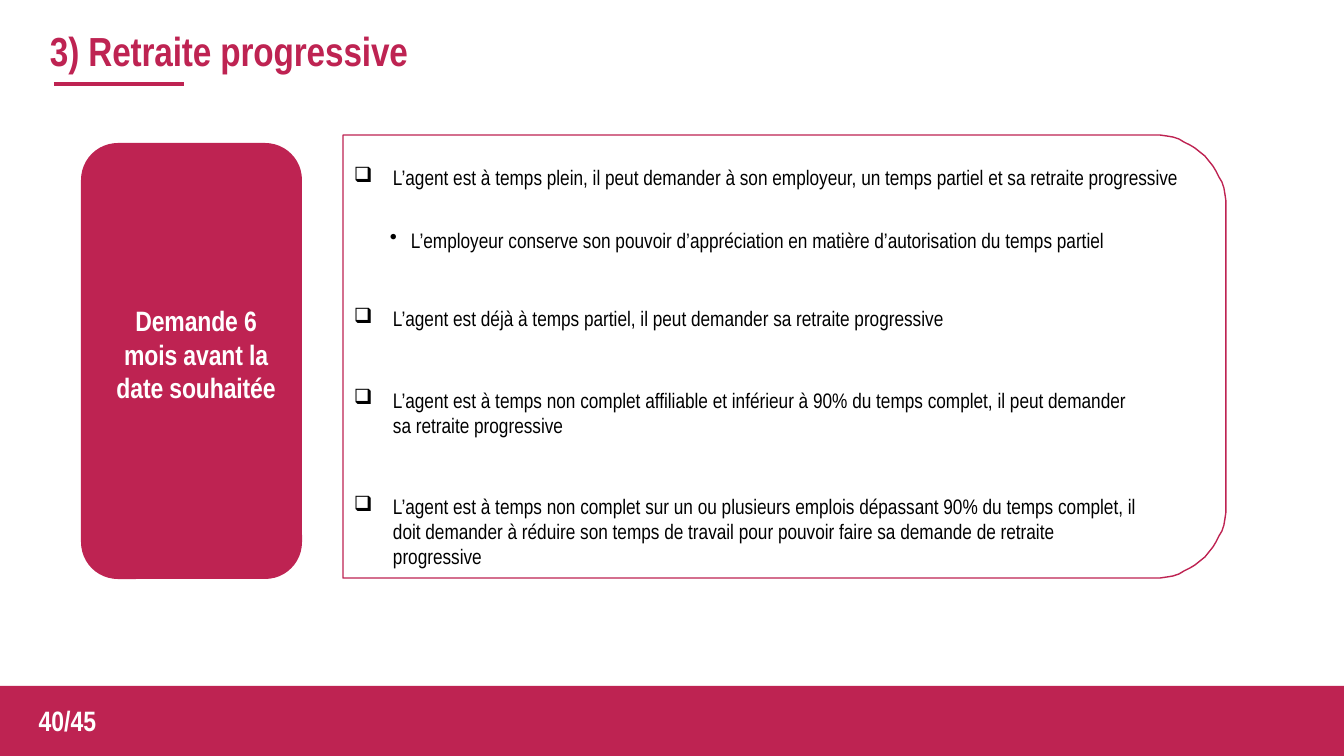
import math

import pptx
import pptx.chart.data
import pptx.dml.color
import pptx.enum.shapes
import pptx.enum.text
import pptx.oxml
import pptx.oxml.ns
import pptx.util
from lxml import etree

RED = pptx.dml.color.RGBColor(0xBE, 0x23, 0x52)
WHITE = pptx.dml.color.RGBColor(0xFF, 0xFF, 0xFF)
BLACK = pptx.dml.color.RGBColor(0x00, 0x00, 0x00)
FONT = "Arial Narrow"
WIDE, HIGH = 1344, 756
SCALE = 12192000 / WIDE
SHAPE = pptx.enum.shapes.MSO_SHAPE
ALIGN = pptx.enum.text.PP_ALIGN
ANCHOR = pptx.enum.text.MSO_ANCHOR


def emu(*px):
    return [pptx.util.Emu(round(n * SCALE)) for n in px]


def write(frame, lines, size=15, color=BLACK, bold=False, align=ALIGN.LEFT,
          gap=0, line=None, track=0, mark=None, indent=0, hang=0):
    for i, words in enumerate(lines):
        para = frame.paragraphs[0] if i == 0 else frame.add_paragraph()
        para.alignment = align
        if i:
            para.space_before = pptx.util.Pt(gap)
        if line:
            para.line_spacing = line
        if mark:
            props = para._p.get_or_add_pPr()
            left, first = emu(indent, -hang)
            props.set("marL", str(left))
            props.set("indent", str(first))
            tag = pptx.oxml.ns.qn("a:buChar")
            etree.SubElement(props, tag).set("char", mark)
        run = para.add_run()
        run.text = words
        run.font.name = FONT
        run.font.size = pptx.util.Pt(size)
        run.font.bold = bold
        run.font.color.rgb = color
        if track:
            run._r.get_or_add_rPr().set("spc", str(track))


class Deck:
    """Holds the style and the current slide, and draws each kind of element."""

    def __init__(self):
        self.show = pptx.Presentation()
        self.show.slide_width, self.show.slide_height = emu(WIDE, HIGH)
        self.slide = self.show.slides.add_slide(self.show.slide_layouts[6])
        self.shapes = self.slide.shapes

    def block(self, kind, x, y, w, h):
        shape = self.shapes.add_shape(kind, *emu(x, y, w, h))
        shape.shadow.inherit = False
        shape.fill.solid()
        shape.fill.fore_color.rgb = RED
        shape.line.fill.background()

    def panel(self, x, y, w, h, radius):
        right, base = x + w, y + h
        mid = right - radius
        arc = [(math.sin(math.radians(a)), math.cos(math.radians(a)))
               for a in range(0, 91, 5)]
        top = [(mid + radius * s, y + radius * (1 - c)) for s, c in arc]
        low = [(px, y + base - py) for px, py in reversed(top)]
        pen = self.shapes.build_freeform(x, y, scale=SCALE)
        pen.add_line_segments(top + low + [(x, base)], close=True)
        shape = pen.convert_to_shape()
        shape.shadow.inherit = False
        shape.fill.background()
        shape.line.color.rgb = RED
        shape.line.width = pptx.util.Pt(1)

    def rule(self, x, y, end):
        kind = pptx.enum.shapes.MSO_CONNECTOR.STRAIGHT
        line = self.shapes.add_connector(kind, *emu(x, y, end, y))
        line.line.color.rgb = RED
        line.line.width = pptx.util.Pt(3)
        props = line._element.spPr
        etree.SubElement(props, pptx.oxml.ns.qn("a:effectLst"))

    def text(self, x, y, w, h, *lines, anchor=ANCHOR.TOP, **style):
        frame = self.shapes.add_textbox(*emu(x, y, w, h)).text_frame
        frame.word_wrap = True
        frame.vertical_anchor = anchor
        frame.margin_left = frame.margin_right = 0
        frame.margin_top = frame.margin_bottom = 0
        write(frame, lines, **style)


def main():
    deck = Deck()
    box = dict(mark="❑", indent=40, hang=39)
    label = dict(size=20, color=WHITE, bold=True, align=ALIGN.CENTER,
                 anchor=ANCHOR.MIDDLE)

    deck.block(SHAPE.RECTANGLE, 0, 686, WIDE, 70)
    deck.text(50, 25, 931, 50, "3) Retraite progressive", size=29, color=RED,
              bold=True, track=-10, anchor=ANCHOR.MIDDLE)
    deck.rule(54, 84, 184)

    deck.panel(343, 135, 883, 443, 72)
    deck.text(353, 165, 830, 27,
              "L’agent est à temps plein, il peut demander à son employeur, "
              "un temps partiel et sa retraite progressive", **box)
    deck.text(388, 216, 796, 38,
              "L’employeur conserve son pouvoir d’appréciation en matière "
              "d’autorisation du temps partiel",
              line=1.44, mark="•", indent=23, hang=21)
    deck.text(353, 306, 789, 270,
              "L’agent est déjà à temps partiel, il peut demander sa retraite "
              "progressive",
              "L’agent est à temps non complet affiliable et inférieur à 90% du "
              "temps complet, il peut demander sa retraite progressive",
              "L’agent est à temps non complet sur un ou plusieurs emplois "
              "dépassant 90% du temps complet, il doit demander à réduire son "
              "temps de travail pour pouvoir faire sa demande de retraite "
              "progressive", gap=40, **box)

    deck.block(SHAPE.ROUNDED_RECTANGLE, 81, 143, 221, 436)
    deck.text(112, 303, 168, 102, "Demande 6 mois avant la date souhaitée",
              track=-10, **label)
    deck.text(17, 698, 101, 44, "40/45", **label)
    deck.show.save("out.pptx")


if __name__ == "__main__":
    main()
